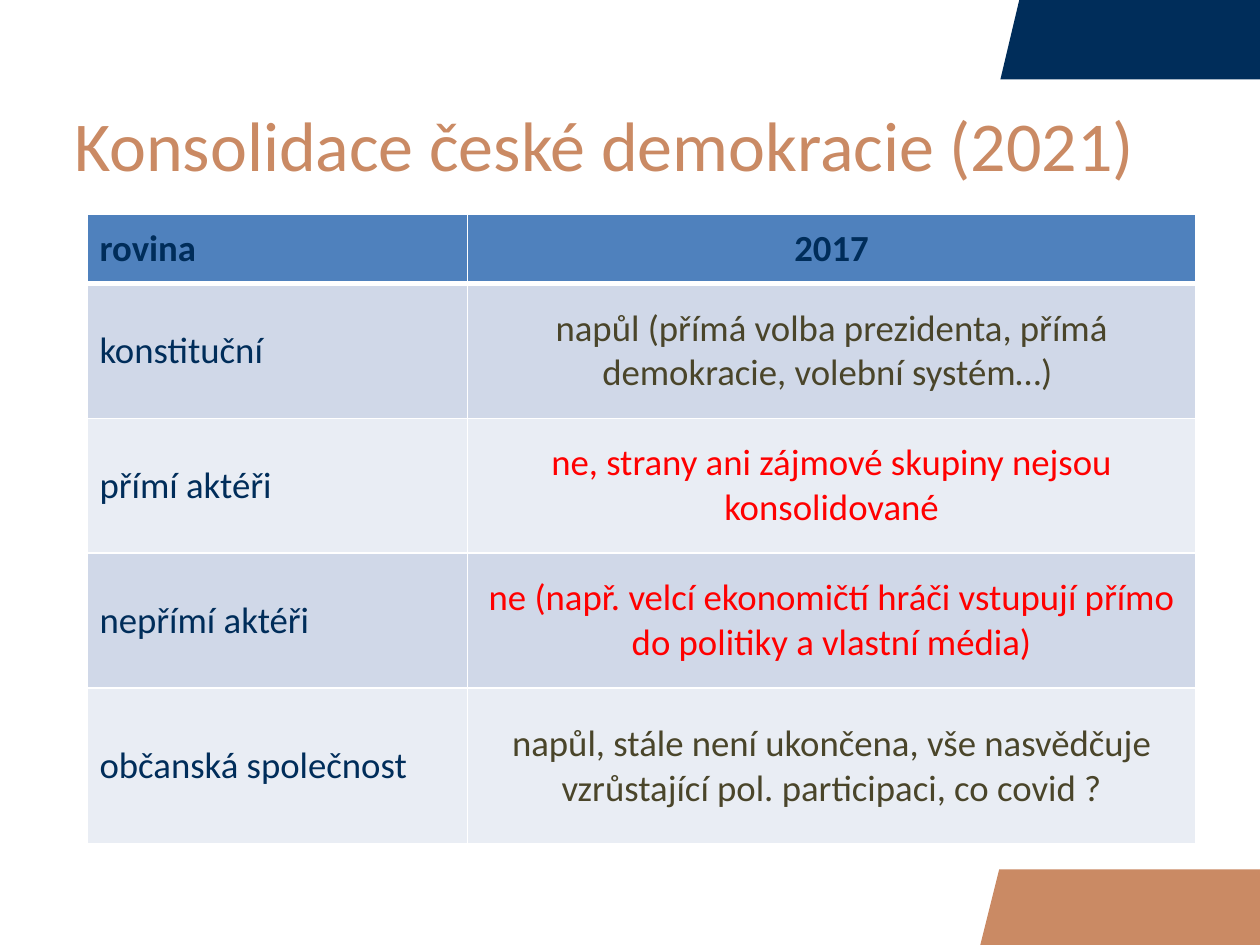
from dataclasses import dataclass

from lxml import etree
from pptx import Presentation
from pptx import util as u
from pptx.dml.color import RGBColor
from pptx.enum import text
from pptx.oxml import ns


@dataclass(frozen=True)
class Theme:
    font: str = "Calibri"
    title_size: int = 40
    table_size: int = 21
    navy: str = "002D5A"
    copper: str = "CA8A64"
    olive: str = "4A452A"
    red: str = "FF0000"
    white: str = "FFFFFF"
    header: str = "4F81BD"
    bands: tuple = ("D0D8E8", "E9EDF4")


class SlideBuilder:
    """Draws themed elements on the current slide."""

    def __init__(self, page, theme):
        self.page = page
        self.theme = theme

    def style(self, paragraph, size, color, bold=False):
        font = paragraph.font
        font.name = self.theme.font
        font.size = u.Pt(size)
        font.bold = bold
        font.color.rgb = RGBColor.from_string(color)

    def corner(self, points, color):
        start, *rest = [(u.Inches(x), u.Inches(y)) for x, y in points]
        outline = self.page.shapes.build_freeform(*start)
        outline.add_line_segments(rest, close=True)
        shape = outline.convert_to_shape()
        shape.shadow.inherit = False
        shape.fill.solid()
        shape.fill.fore_color.rgb = RGBColor.from_string(color)
        shape.line.fill.background()

    def title(self, words, left, top, width, height):
        box = self.page.shapes.add_textbox(*map(u.Inches, (left, top, width, height)))
        frame = box.text_frame
        frame.word_wrap = True
        frame.vertical_anchor = text.MSO_ANCHOR.MIDDLE
        frame.margin_left = frame.margin_right = u.Inches(0.28)
        frame.text = words
        self.style(frame.paragraphs[0], self.theme.title_size, self.theme.copper)

    def border(self, cell, side, points):
        line = etree.SubElement(cell._tc.get_or_add_tcPr(), ns.qn(f"a:ln{side}"), w=str(u.Pt(points)))
        fill = etree.SubElement(line, ns.qn("a:solidFill"))
        etree.SubElement(fill, ns.qn("a:srgbClr"), val=self.theme.white)

    def cell(self, cell, words, color, row, column):
        is_header = row == 0
        widths = {"L": 1, "R": 1, "T": 3 if row == 1 else 1, "B": 3 if is_header else 1}
        for side, points in widths.items():
            self.border(cell, side, points)
        fill = self.theme.header if is_header else self.theme.bands[(row - 1) % 2]
        cell.fill.solid()
        cell.fill.fore_color.rgb = RGBColor.from_string(fill)
        cell.vertical_anchor = text.MSO_ANCHOR.MIDDLE
        cell.text = words
        paragraph = cell.text_frame.paragraphs[0]
        paragraph.alignment = text.PP_ALIGN.CENTER if column else text.PP_ALIGN.LEFT
        self.style(paragraph, self.theme.table_size, color, is_header)

    def table(self, rows, left, top, widths, heights):
        frame = self.page.shapes.add_table(
            len(rows), len(widths),
            *map(u.Inches, (left, top, sum(widths), sum(heights))))
        table = frame.table
        for column, width in zip(table.columns, widths):
            column.width = u.Inches(width)
        for row, height in zip(table.rows, heights):
            row.height = u.Inches(height)
        for r, (level, verdict, color) in enumerate(rows):
            self.cell(table.cell(r, 0), level, self.theme.navy, r, 0)
            self.cell(table.cell(r, 1), verdict, color, r, 1)


def main():
    theme = Theme()
    deck = Presentation()
    deck.slide_width, deck.slide_height = u.Inches(10), u.Inches(7.5)
    slide = SlideBuilder(deck.slides.add_slide(deck.slide_layouts[6]), theme)

    slide.corner([(7.94, 0.63), (8.09, 0), (10, 0), (10, 0.63)], theme.navy)
    slide.corner([(7.78, 7.5), (7.93, 6.9), (10, 6.9), (10, 7.5)], theme.copper)
    slide.title("Konsolidace české demokracie (2021)", 0.31, 0.92, 9.24, 0.44)

    rows = [
        ("rovina", "2017", theme.navy),
        ("konstituční",
         "napůl (přímá volba prezidenta, přímá demokracie, volební systém…) ", theme.olive),
        ("přímí aktéři",
         "ne, strany ani zájmové skupiny nejsou konsolidované", theme.red),
        ("nepřímí aktéři",
         "ne (např. velcí ekonomičtí hráči vstupují přímo do politiky a vlastní média)", theme.red),
        ("občanská společnost",
         "napůl, stále není ukončena, vše nasvědčuje vzrůstající pol. participaci, co covid ?",
         theme.olive),
    ]
    slide.table(rows, 0.69, 1.7, widths=[3.02, 5.78], heights=[0.55, 1.07, 1.07, 1.07, 1.24])
    deck.save("out.pptx")


if __name__ == "__main__":
    main()
